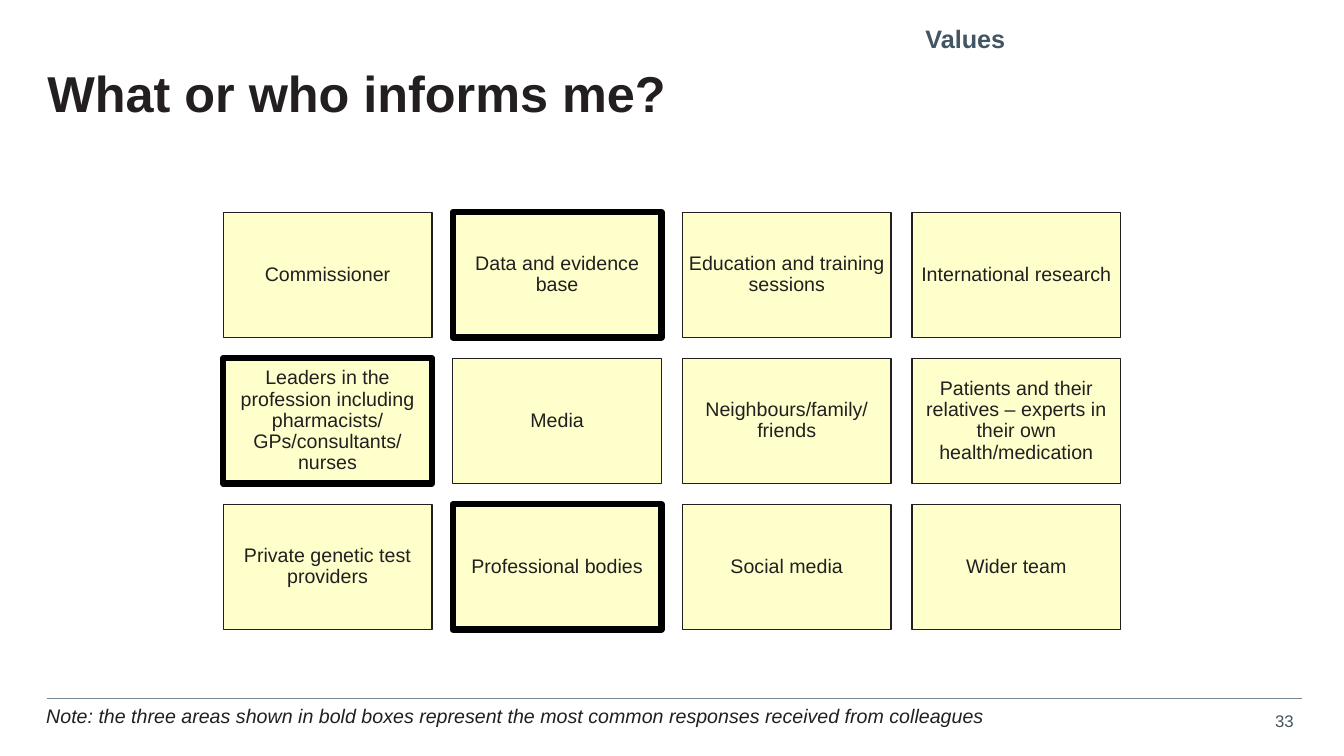
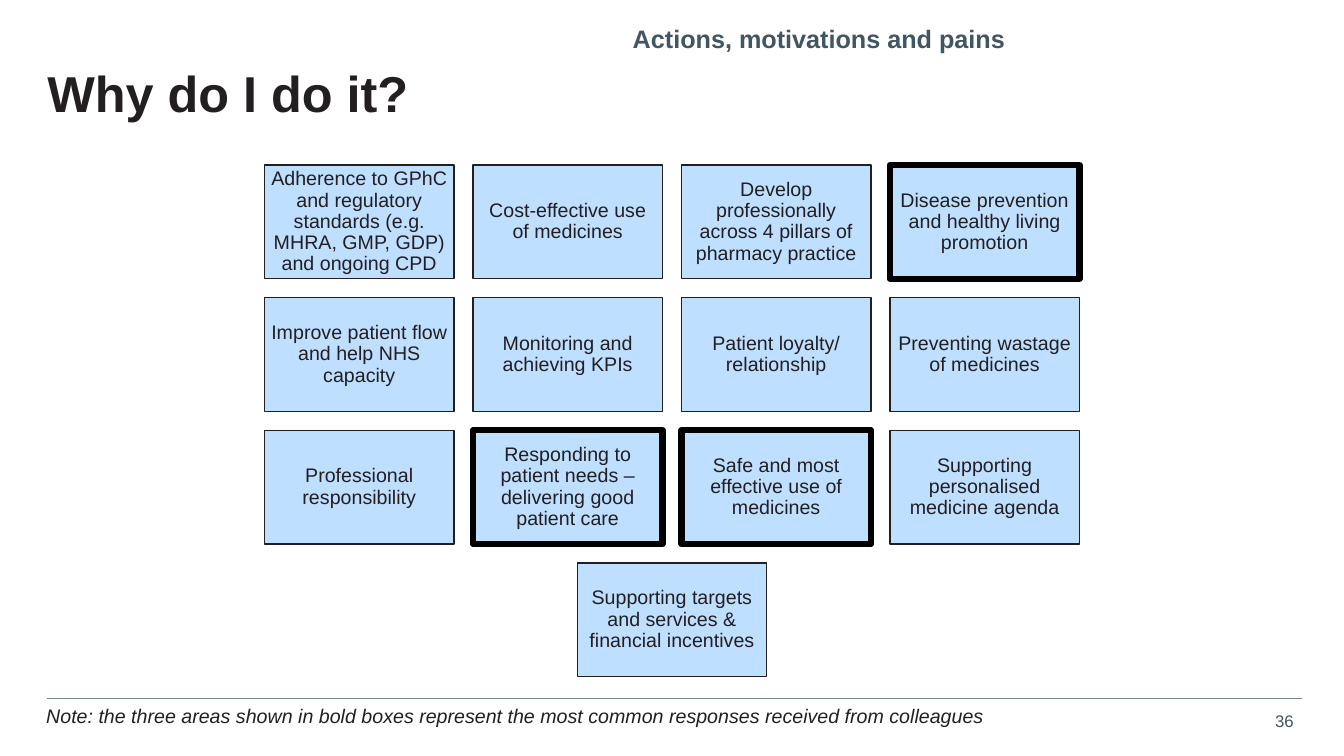
import pptx
import pptx.dml.color
import pptx.enum.shapes
import pptx.enum.text
import pptx.oxml.ns
import pptx.util
from lxml import etree

SLIDE_WIDTH = pptx.util.Inches(13.33)
SLIDE_HEIGHT = pptx.util.Inches(7.5)
FONT = "Arial"
INK, SLATE, RULE, BLACK = "231F20", "425563", "768692", "000000"
YELLOW, BLUE = "FFFFCC", "BEDFFF"

ALIGN = pptx.enum.text.PP_ALIGN
ANCHOR = pptx.enum.text.MSO_ANCHOR
NO_INSET = (0, 0, 0, 0)
TEXT_INSET = (0.1, 0.05, 0.1, 0.05)
CARD_INSET = (0.06, 0.06, 0.06, 0.06)

TITLE_BOX = (3.53, 9.07, 93.55, 9.07)
SECTION_BOX = (35.86, 3.07, 38.93, 8.4)
NOTE_BOX = (2.7, 92.4, 93.55, 4.53)
NUMBER_BOX = (93.92, 93.33, 3.08, 4)
RULE_LEFT, RULE_RIGHT, RULE_TOP = 3.53, 96.85, 92.4

COLUMNS = 4
GAP_SHARE, HEIGHT_SHARE = 0.1, 0.6
CARDS_CENTRE = 55.67

TITLE = {"font": {"size": 36, "bold": True},
         "paragraph": {"line_spacing": 0.9}}
SECTION = {"font": {"size": 18, "bold": True}, "colour": SLATE,
           "paragraph": {"alignment": ALIGN.RIGHT,
                         "line_spacing": pptx.util.Pt(22)}}
CARD = {"font": {"size": 14}, "inset": CARD_INSET,
        "frame": {"vertical_anchor": ANCHOR.MIDDLE},
        "paragraph": {"alignment": ALIGN.CENTER, "line_spacing": 0.9}}
NOTE = {"font": {"size": 14, "italic": True}, "inset": TEXT_INSET}
NUMBER = {"font": {"size": 12}, "colour": SLATE, "inset": TEXT_INSET,
          "frame": {"word_wrap": False},
          "paragraph": {"alignment": ALIGN.RIGHT}}

NOTE_TEXT = ("Note: the three areas shown in bold boxes represent "
             "the most common responses received from colleagues")

SLIDES = [
    {"title": "What or who informs me?", "section": "Values", "number": "33",
     "fill": YELLOW, "card_width": 15.53,
     "common": {"Data and evidence base", "Professional bodies",
                "Leaders in the profession including pharmacists/ "
                "GPs/consultants/ nurses"},
     "cards": [
         "Commissioner",
         "Data and evidence base",
         "Education and training sessions",
         "International research",
         "Leaders in the profession including pharmacists/ "
         "GPs/consultants/ nurses",
         "Media",
         "Neighbours/family/ friends",
         "Patients and their relatives – experts in their own "
         "health/medication",
         "Private genetic test providers",
         "Professional bodies",
         "Social media",
         "Wider team"]},
    {"title": "Why do I do it?", "section": "Actions, motivations and pains",
     "number": "36", "fill": BLUE, "card_width": 14.1,
     "common": {"Disease prevention and healthy living promotion",
                "Responding to patient needs – delivering good patient care",
                "Safe and most effective use of medicines"},
     "cards": [
         "Adherence to GPhC and regulatory standards (e.g. MHRA, GMP, GDP) "
         "and ongoing CPD",
         "Cost-effective use of medicines",
         "Develop professionally across 4 pillars of pharmacy practice",
         "Disease prevention and healthy living promotion",
         "Improve patient flow and help NHS capacity",
         "Monitoring and achieving KPIs",
         "Patient loyalty/ relationship",
         "Preventing wastage of medicines",
         "Professional responsibility",
         "Responding to patient needs – delivering good patient care",
         "Safe and most effective use of medicines",
         "Supporting personalised medicine agenda",
         "Supporting targets and services & financial incentives"]},
]


def colour(value):
    """Turn a hex string into a colour."""
    return pptx.dml.color.RGBColor.from_string(value)


def across(percent):
    """Turn a percentage of the slide width into a length."""
    return int(SLIDE_WIDTH * percent / 100)


def down(percent):
    """Turn a percentage of the slide height into a length."""
    return int(SLIDE_HEIGHT * percent / 100)


def place(box):
    """Turn a box in percentages into lengths on the slide."""
    left, top, width, height = box
    return across(left), down(top), across(width), down(height)


def assign(target, values):
    """Set each attribute named in a dict of format values."""
    for attribute, value in values.items():
        setattr(target, attribute, value)


def write(frame, text, style):
    """Write one formatted paragraph into a text frame."""
    sides = ("margin_left", "margin_top", "margin_right", "margin_bottom")
    insets = map(pptx.util.Inches, style.get("inset", NO_INSET))
    assign(frame, dict(zip(sides, insets)))
    assign(frame, {"word_wrap": True, "vertical_anchor": ANCHOR.TOP,
                   **style.get("frame", {})})
    paragraph = frame.paragraphs[0]
    assign(paragraph, style.get("paragraph", {}))
    run = paragraph.add_run()
    run.text = text
    font = style["font"]
    assign(run.font, {**font, "name": FONT,
                      "size": pptx.util.Pt(font["size"])})
    run.font.color.rgb = colour(style.get("colour", INK))


def add_text(slide, box, text, style):
    """Add a text box in the given box."""
    write(slide.shapes.add_textbox(*place(box)).text_frame, text, style)


def add_rule(slide):
    """Draw the thin line above the footer."""
    rule = slide.shapes.add_connector(
        pptx.enum.shapes.MSO_CONNECTOR.STRAIGHT,
        across(RULE_LEFT), down(RULE_TOP), across(RULE_RIGHT), down(RULE_TOP))
    rule.line.color.rgb = colour(RULE)
    rule.line.width = pptx.util.Pt(0.5)
    properties = rule._element.spPr
    etree.SubElement(properties, pptx.oxml.ns.qn("a:effectLst"))


def add_card(slide, bounds, text, fill, is_common):
    """Draw one answer card, with a heavy border if it is common."""
    card = slide.shapes.add_shape(
        pptx.enum.shapes.MSO_SHAPE.RECTANGLE, *map(int, bounds))
    card.shadow.inherit = False
    card.fill.solid()
    card.fill.fore_color.rgb = colour(fill)
    card.line.color.rgb = colour(BLACK if is_common else INK)
    card.line.width = pptx.util.Pt(4.5 if is_common else 1)
    write(card.text_frame, text, CARD)


def add_cards(slide, content):
    """Lay out the answer cards in rows, each centred on the slide."""
    width = across(content["card_width"])
    height, gap = width * HEIGHT_SHARE, width * GAP_SHARE
    cards = content["cards"]
    rows = [cards[start:start + COLUMNS]
            for start in range(0, len(cards), COLUMNS)]
    block_height = len(rows) * (height + gap) - gap
    top = down(CARDS_CENTRE) - block_height / 2
    for row_index, row in enumerate(rows):
        left = (SLIDE_WIDTH - len(row) * (width + gap) + gap) / 2
        for column, text in enumerate(row):
            bounds = (left + column * (width + gap),
                      top + row_index * (height + gap), width, height)
            add_card(slide, bounds, text, content["fill"],
                     text in content["common"])


def add_frame(slide, content):
    """Add the title, section name and footer shared by all slides."""
    add_rule(slide)
    add_text(slide, NUMBER_BOX, content["number"], NUMBER)
    add_text(slide, TITLE_BOX, content["title"], TITLE)
    add_text(slide, SECTION_BOX, content["section"], SECTION)
    add_text(slide, NOTE_BOX, NOTE_TEXT, NOTE)


def main():
    """Build and save the presentation."""
    deck = pptx.Presentation()
    deck.slide_width, deck.slide_height = SLIDE_WIDTH, SLIDE_HEIGHT
    for content in SLIDES:
        slide = deck.slides.add_slide(deck.slide_layouts[6])
        add_frame(slide, content)
        add_cards(slide, content)
    deck.save("out.pptx")


if __name__ == "__main__":
    main()
